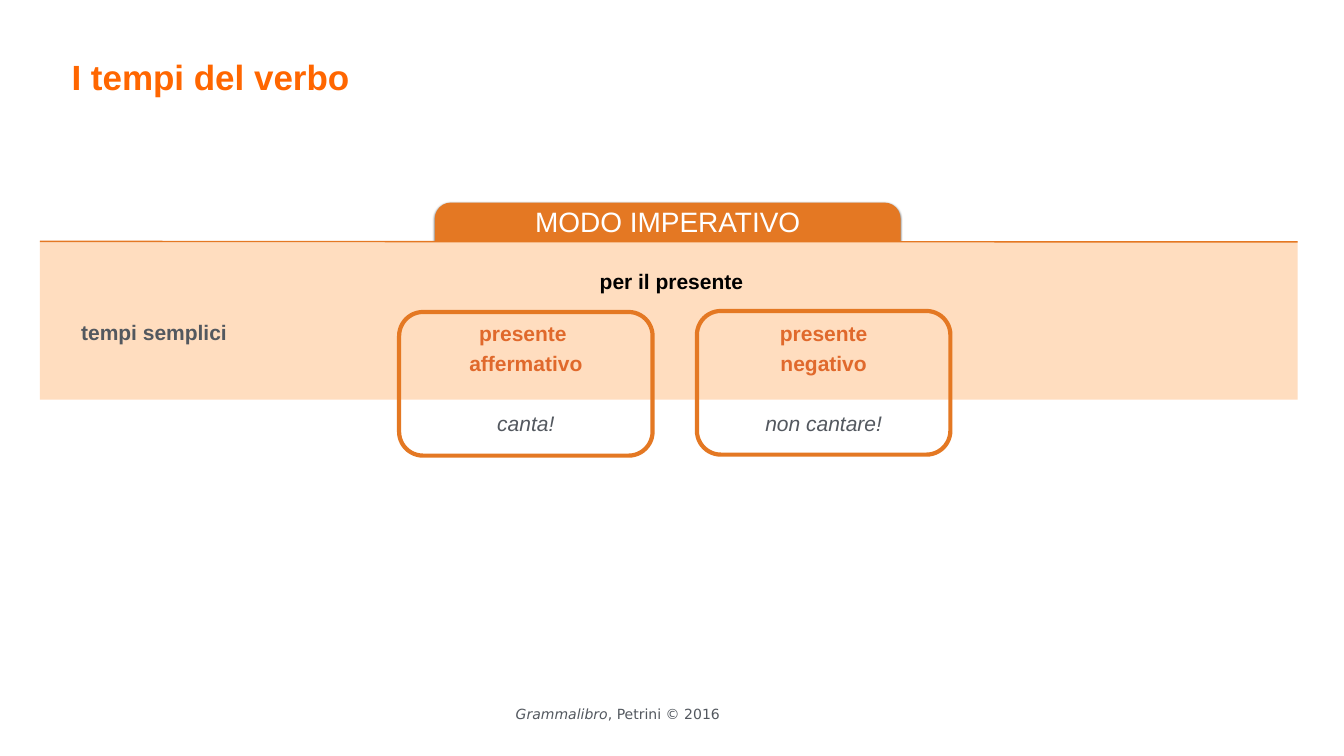
import pptx
import pptx.util
import pptx.dml.color
import pptx.enum.shapes
import pptx.enum.text
import pptx.oxml
import pptx.oxml.ns
from pptx.util import Inches

ORANGE = "E47823"
GREY = "53585F"
DARK_ORANGE = "E0692C"
ALIGN = pptx.enum.text.PP_ALIGN
ANCHOR = pptx.enum.text.MSO_ANCHOR
SHAPE = pptx.enum.shapes.MSO_SHAPE


def color(value):
    return pptx.dml.color.RGBColor.from_string(value)


def add_text(place, paragraphs, size=30, font="Arial", align=ALIGN.CENTER, spacing=1.2,
             anchor=ANCHOR.MIDDLE, margins=(0.06, 0.06), wrap=True):
    """Each paragraph is (space before, runs); each run is (text, hex, bold, italic)."""
    box = page.shapes.add_textbox(*[Inches(length) for length in place])
    frame = box.text_frame
    frame.word_wrap = wrap
    frame.vertical_anchor = anchor
    frame.margin_left = frame.margin_right = Inches(margins[0])
    frame.margin_top = frame.margin_bottom = Inches(margins[1])
    for index, (before, runs) in enumerate(paragraphs):
        para = frame.add_paragraph() if index else frame.paragraphs[0]
        para.alignment = align
        para.line_spacing = spacing
        if before:
            para.space_before = pptx.util.Pt(before)
        for text, hex_value, bold, italic in runs:
            span = para.add_run()
            span.text = text
            span.font.name = font
            span.font.size = pptx.util.Pt(size)
            span.font.bold = bold
            span.font.italic = italic
            span.font.color.rgb = color(hex_value)


deck = pptx.Presentation()
deck.slide_width = Inches(26.67)
deck.slide_height = Inches(15)
page = deck.slides.add_slide(deck.slide_layouts[6])

# Footer
add_text((10.1, 14.03, 4.32, 0.36),
         [(0, [("Grammalibro", GREY, False, True), (", Petrini © 2016", GREY, False, False)])],
         size=20, font="DejaVu Sans", spacing=0.7, wrap=False)

# Heading tab with a soft shadow, its lower part covered by the band
tab = page.shapes.add_shape(SHAPE.ROUNDED_RECTANGLE, Inches(8.63), Inches(4.02),
                            Inches(9.24), Inches(2.44))
tab.adjustments[0] = 0.13
tab.fill.solid()
tab.fill.fore_color.rgb = color(ORANGE)
tab.line.fill.background()
tab.shadow.inherit = False
effects = tab._element.spPr.find(pptx.oxml.ns.qn("a:effectLst"))
effects.append(pptx.oxml.parse_xml(
    f'<a:outerShdw {pptx.oxml.ns.nsdecls("a")} blurRad="38100" dist="25400" dir="5400000" '
    'rotWithShape="0"><a:srgbClr val="000000"><a:alpha val="50000"/></a:srgbClr></a:outerShdw>'))

# Band and its top rule
band = page.shapes.add_shape(SHAPE.RECTANGLE, Inches(0.79), Inches(4.79),
                             Inches(24.96), Inches(3.14))
band.fill.solid()
band.fill.fore_color.rgb = color("FFDDBF")
band.line.fill.background()
band.shadow.inherit = False

rule = page.shapes.add_connector(pptx.enum.shapes.MSO_CONNECTOR.STRAIGHT,
                                 Inches(0.79), Inches(4.79), Inches(25.75), Inches(4.8))
rule.line.color.rgb = color(ORANGE)
rule.line.width = pptx.util.Pt(2)
rule._element.spPr.append(pptx.oxml.parse_xml(
    f'<a:effectLst {pptx.oxml.ns.nsdecls("a")}/>'))

# Heading and row labels
add_text((8.63, 3.94, 9.24, 0.83), [(0, [("MODO IMPERATIVO", "FFFFFF", False, False)])],
         size=40, spacing=1.1, anchor=ANCHOR.TOP, margins=(0.1, 0.05))
add_text((1.55, 6.18, 4.5, 0.7), [(0, [("tempi semplici", GREY, True, False)])],
         align=ALIGN.LEFT)
add_text((10.81, 5.17, 5.03, 0.7), [(0, [("per il presente", "000000", True, False)])])

# Tense cards: name on two lines, example one line lower
cards = [
    (7.92, 6.19, "presente ", "affermativo", "canta!"),
    (13.83, 6.17, "presente", "negativo", "non cantare!"),
]
for left, top, tense, form, example in cards:
    add_text((left, 6.19, 5.03, 2.52), [
        (0, [(tense, DARK_ORANGE, True, False)]),
        (0, [(form, DARK_ORANGE, True, False)]),
        (41.4, [(example, GREY, False, True)]),
    ])
    card = page.shapes.add_shape(SHAPE.ROUNDED_RECTANGLE, Inches(left), Inches(top),
                                 Inches(5.03), Inches(2.85))
    card.fill.background()
    card.line.color.rgb = color(ORANGE)
    card.line.width = pptx.util.Pt(6)
    card.shadow.inherit = False

# Title
add_text((1.36, 0.97, 10.26, 1.02), [(0, [("I tempi del verbo", "FF6600", True, False)])],
         size=50, align=ALIGN.LEFT, spacing=1.1)

deck.save("out.pptx")
